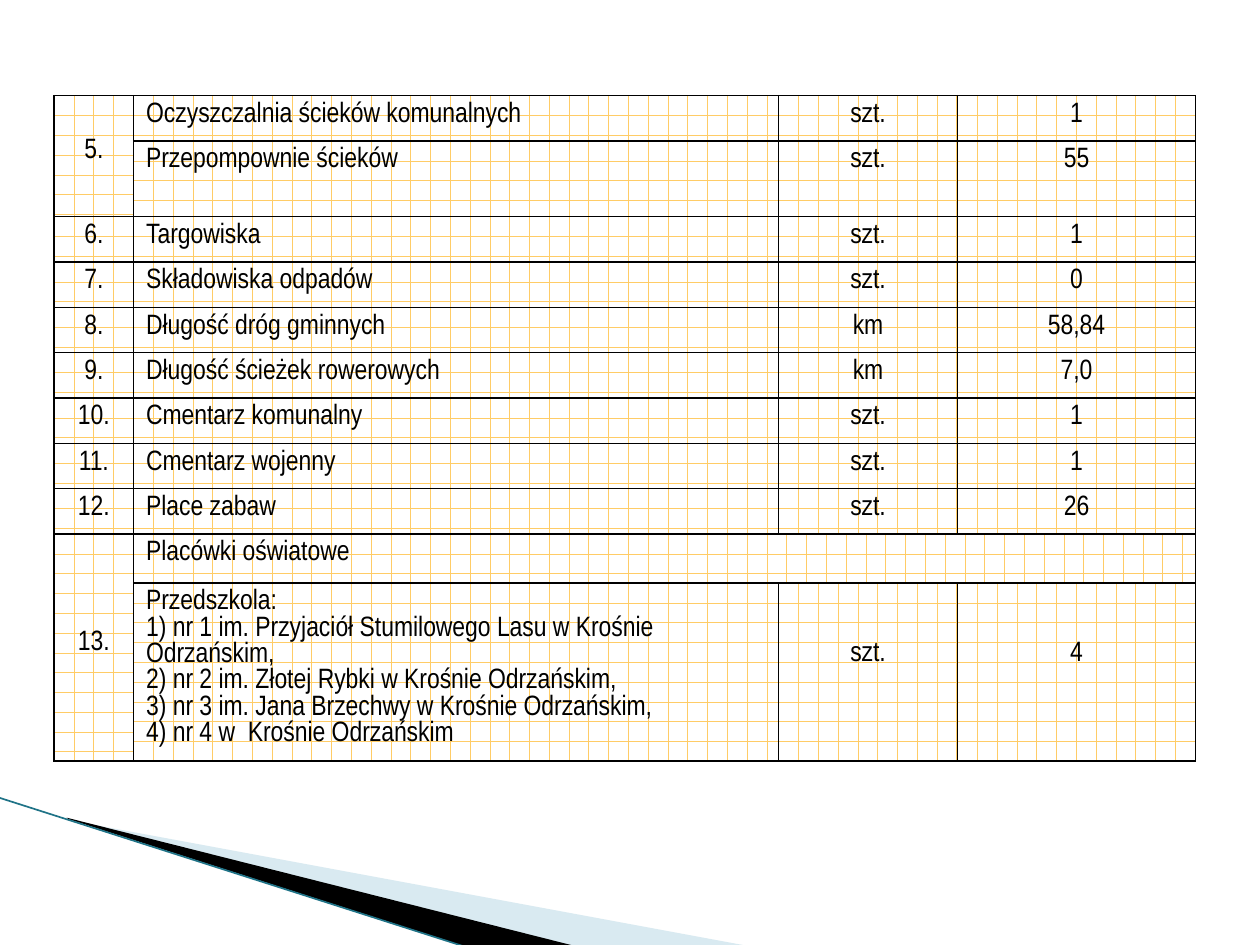
from lxml import etree
from pptx import Presentation
from pptx.dml.color import RGBColor
from pptx.enum.dml import MSO_PATTERN
from pptx.enum.text import PP_ALIGN
from pptx.oxml.ns import qn
from pptx.util import Inches, Pt

THEME = {
    "font": "Arial Narrow", "size": Pt(16), "ink": "000000",
    "grid": "FFCC66", "paper": "FFFFFF", "border": Pt(1),
    "pale": "A0CBDC", "pale_alpha": 40, "edge": "1F7387", "edge_width": Pt(0.95),
}

# Content: number, facility, unit, quantity (None continues a merged cell)
FACILITIES = [
    ("5.", "Oczyszczalnia ścieków komunalnych", "szt.", "1"),
    (None, "Przepompownie ścieków", "szt.", "55"),
    ("6.", "Targowiska", "szt.", "1"),
    ("7.", "Składowiska odpadów", "szt.", "0"),
    ("8.", "Długość dróg gminnych", "km", "58,84"),
    ("9.", "Długość ścieżek rowerowych", "km", "7,0"),
    ("10.", "Cmentarz komunalny", "szt.", "1"),
    ("11.", "Cmentarz wojenny", "szt.", "1"),
    ("12.", "Place zabaw", "szt.", "26"),
    ("13.", "Placówki oświatowe", None, None),
    (None, "Przedszkola:\n"
           "1) nr 1 im. Przyjaciół Stumilowego Lasu w Krośnie Odrzańskim,\n"
           "2) nr 2 im. Złotej Rybki w Krośnie Odrzańskim,\n"
           "3) nr 3 im. Jana Brzechwy w Krośnie Odrzańskim,\n"
           "4) nr 4 w  Krośnie Odrzańskim", "szt.", "4"),
]
COLUMN_WIDTHS = [0.63, 5.12, 1.42, 1.89]
ROW_HEIGHTS = [0.36, 0.6] + [0.36] * 7 + [0.39, 1.41]
MERGES = [((0, 0), (1, 0)), ((9, 0), (10, 0)), ((9, 1), (9, 3))]
TOP_MARGINS = {(0, 0): 0.34, (9, 0): 0.76, (10, 2): 0.46, (10, 3): 0.46}

# Corner decoration: outline, colour, opacity in percent
WEDGES = [
    ([(0.55, 6.51), (5.95, 7.51), (4.56, 7.51), (0.55, 6.5)],
     THEME["pale"], THEME["pale_alpha"]),
    ([(0.53, 6.49), (4.57, 7.51), (3.72, 7.52), (0.54, 6.5)], THEME["ink"], 100),
]
EDGE = [(-0.01, 6.33), (3.71, 7.52)]


def rgb(value):
    return RGBColor.from_string(value)


def add_wedge(slide, outline, color, opacity):
    points = [(Inches(x), Inches(y)) for x, y in outline]
    builder = slide.shapes.build_freeform(*points[0], scale=1.0)
    builder.add_line_segments(points[1:], close=True)
    wedge = builder.convert_to_shape()
    wedge.shadow.inherit = False
    wedge.line.fill.background()
    wedge.fill.solid()
    wedge.fill.fore_color.rgb = rgb(color)
    if opacity < 100:
        swatch = wedge.fill._xPr.find(".//" + qn("a:srgbClr"))
        etree.SubElement(swatch, qn("a:alpha"), val=str(opacity * 1000))


def add_edge(slide, start, end):
    edge = slide.shapes.add_connector(1, *map(Inches, start + end))
    edge.line.color.rgb = rgb(THEME["edge"])
    edge.line.width = THEME["edge_width"]
    etree.SubElement(edge._element.spPr, qn("a:effectLst"))


def style_cell(cell):
    properties = cell._tc.get_or_add_tcPr()
    for side in ("lnL", "lnR", "lnT", "lnB"):
        border = etree.SubElement(properties, qn("a:" + side), w=str(THEME["border"]))
        fill = etree.SubElement(border, qn("a:solidFill"))
        etree.SubElement(fill, qn("a:srgbClr"), val=THEME["ink"])
    cell.fill.patterned()
    cell.fill.pattern = MSO_PATTERN.DOTTED_GRID
    cell.fill.fore_color.rgb = rgb(THEME["grid"])
    cell.fill.back_color.rgb = rgb(THEME["paper"])


def write_cell(cell, text, align):
    cell.text = text
    for paragraph in cell.text_frame.paragraphs:
        paragraph.alignment = align
        for run in paragraph.runs:
            for name, value in {"name": THEME["font"], "size": THEME["size"]}.items():
                setattr(run.font, name, value)
            run.font.color.rgb = rgb(THEME["ink"])


def add_facilities(slide):
    table = slide.shapes.add_table(
        len(FACILITIES), len(COLUMN_WIDTHS), Inches(0.43), Inches(0.76),
        Inches(sum(COLUMN_WIDTHS)), Inches(sum(ROW_HEIGHTS))).table
    table.first_row = table.horz_banding = False
    for column, width in zip(table.columns, COLUMN_WIDTHS):
        column.width = Inches(width)
    for row, height in zip(table.rows, ROW_HEIGHTS):
        row.height = Inches(height)
    for first, last in MERGES:
        table.cell(*first).merge(table.cell(*last))
    for r, record in enumerate(FACILITIES):
        for c, text in enumerate(record):
            cell = table.cell(r, c)
            style_cell(cell)
            if text is not None:
                write_cell(cell, text, PP_ALIGN.LEFT if c == 1 else PP_ALIGN.CENTER)
            if (r, c) in TOP_MARGINS:
                cell.margin_top = Inches(TOP_MARGINS[r, c])


def main():
    deck = Presentation()
    deck.slide_width, deck.slide_height = Inches(10), Inches(7.5)
    slide = deck.slides.add_slide(deck.slide_layouts[6])
    for wedge in WEDGES:
        add_wedge(slide, *wedge)
    add_edge(slide, *EDGE)
    add_facilities(slide)
    deck.save("out.pptx")


if __name__ == "__main__":
    main()
